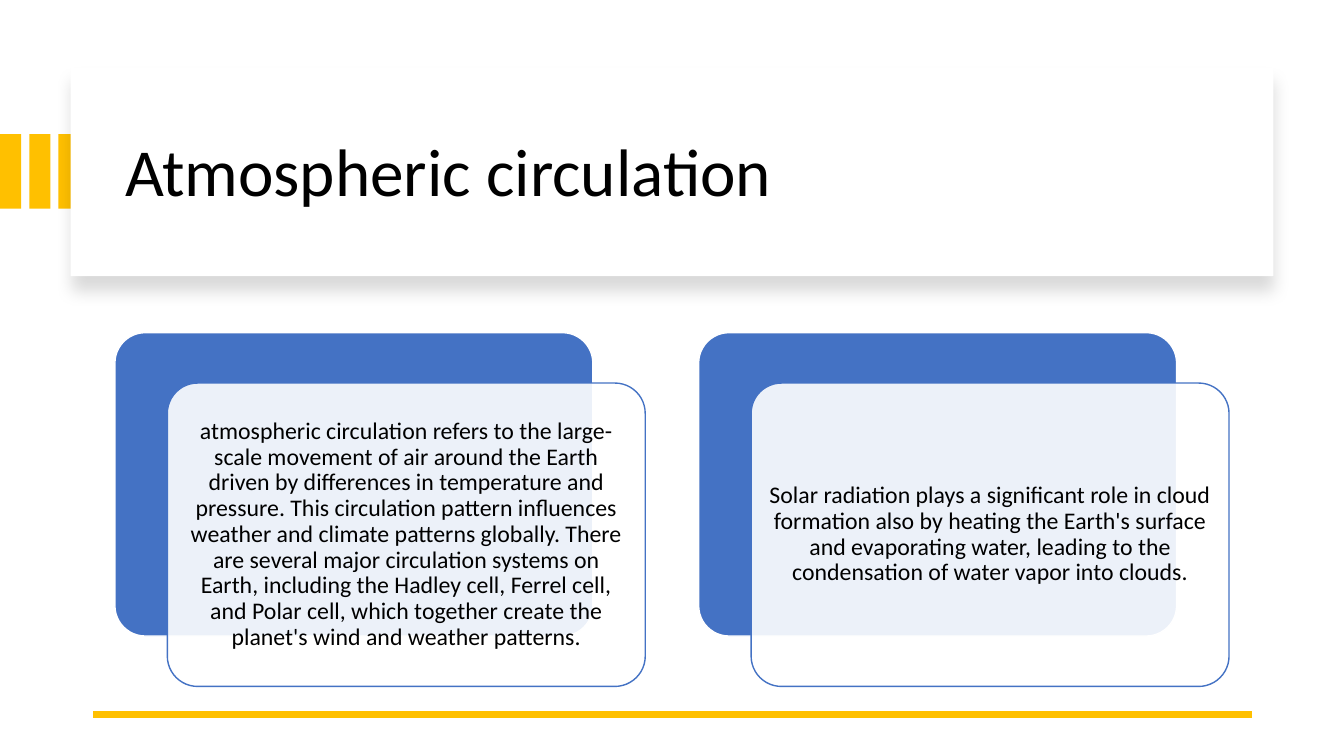
"""Build the slide on atmospheric circulation."""
from lxml.etree import SubElement
from pptx import Presentation
from pptx.dml.color import RGBColor
from pptx.enum.shapes import MSO_CONNECTOR, MSO_SHAPE
from pptx.enum.text import MSO_ANCHOR, PP_ALIGN
from pptx.oxml.ns import qn
from pptx.util import Pt

TITLE = "Atmospheric circulation"
CARDS = [
    "atmospheric circulation refers to the large-scale movement of air around the Earth "
    "driven by differences in temperature and pressure. This circulation pattern influences "
    "weather and climate patterns globally. There are several major circulation systems on "
    "Earth, including the Hadley cell, Ferrel cell, and Polar cell, which together create "
    "the planet's wind and weather patterns.",
    "Solar radiation plays a significant role in cloud formation also by heating the "
    "Earth's surface and evaporating water, leading to the condensation of water vapor "
    "into clouds.",
]
BLACK = RGBColor(0x00, 0x00, 0x00)
WHITE = RGBColor(0xFF, 0xFF, 0xFF)
GOLD = RGBColor(0xFF, 0xC0, 0x00)
BLUE = RGBColor(0x44, 0x72, 0xC4)
FONT = "Calibri"
SCALE = 9144
CARD_LEFT, CARD_TOP, CARD_WIDE, CARD_HIGH = 114, 330, 474, 301
CARD_STEP, SHIFT_X, SHIFT_Y, INSET = 579, 52, 50, 7


def px(*nums):
    """Turn pixel lengths into EMU."""
    return [num * SCALE for num in nums]


def add_box(slide, kind, box, fill, line=None):
    """Add a filled shape with an optional outline."""
    shape = slide.shapes.add_shape(kind, *px(*box))
    shape.shadow.inherit = False
    shape.fill.solid()
    shape.fill.fore_color.rgb = fill
    if line is None:
        shape.line.fill.background()
    else:
        shape.line.color.rgb = line
        shape.line.width = Pt(1)
    return shape


def add_text(frame, text, size, align):
    """Write one run of black text, centred in height."""
    frame.word_wrap = True
    frame.vertical_anchor = MSO_ANCHOR.MIDDLE
    para = frame.paragraphs[0]
    para.alignment = align
    para.line_spacing = 0.9
    run = para.add_run()
    run.text = text
    run.font.name = FONT
    run.font.size = Pt(size)
    run.font.color.rgb = BLACK


def add_head(slide):
    """Add the gold bars, the shadowed panel and the title."""
    for col in range(3):
        add_box(slide, MSO_SHAPE.RECTANGLE, (col * 29, 133, 21, 74), GOLD)
    panel = add_box(slide, MSO_SHAPE.RECTANGLE, (70, 67, 1193, 207), WHITE)
    glow = SubElement(
        panel.element.spPr.find(qn("a:effectLst")), qn("a:outerShdw"),
        blurRad=str(Pt(11)), dist=str(Pt(10)), dir="5400000", algn="t", rotWithShape="0")
    tint = SubElement(glow, qn("a:srgbClr"), val=str(BLACK))
    SubElement(tint, qn("a:alpha"), val="15000")
    title = slide.shapes.title
    title.left, title.top, title.width, title.height = px(114, 88, 1113, 170)
    add_text(title.text_frame, TITLE, 48, PP_ALIGN.LEFT)
    panel.element.addnext(title.element)


def add_rule(slide):
    """Add the gold line at the foot."""
    rule = slide.shapes.add_connector(MSO_CONNECTOR.STRAIGHT, *px(1242, 709, 92, 709))
    rule.line.color.rgb = GOLD
    rule.line.width = Pt(4.5)
    SubElement(rule.element.spPr, qn("a:effectLst"))


def add_card(slide, left, text):
    """Add a blue card with a see-through text card over it."""
    kind = MSO_SHAPE.ROUNDED_RECTANGLE
    back = add_box(slide, kind, (left, CARD_TOP, CARD_WIDE, CARD_HIGH), BLUE, WHITE)
    front = add_box(
        slide, kind, (left + SHIFT_X, CARD_TOP + SHIFT_Y, CARD_WIDE, CARD_HIGH), WHITE, BLUE)
    for shape in (back, front):
        shape.adjustments[0] = 0.1
    tint = front.element.spPr.find(qn("a:solidFill")).find(qn("a:srgbClr"))
    SubElement(tint, qn("a:alpha"), val="90000")
    frame = front.text_frame
    frame.margin_left, frame.margin_top, frame.margin_right, frame.margin_bottom = px(*[INSET] * 4)
    add_text(frame, text, 17, PP_ALIGN.CENTER)


def main():
    """Build and save the slide."""
    deck = Presentation()
    deck.slide_width, deck.slide_height = px(1333, 750)
    slide = deck.slides.add_slide(deck.slide_layouts[5])
    add_head(slide)
    add_rule(slide)
    for col, text in enumerate(CARDS):
        add_card(slide, CARD_LEFT + col * CARD_STEP, text)
    deck.save("out.pptx")


if __name__ == "__main__":
    main()
